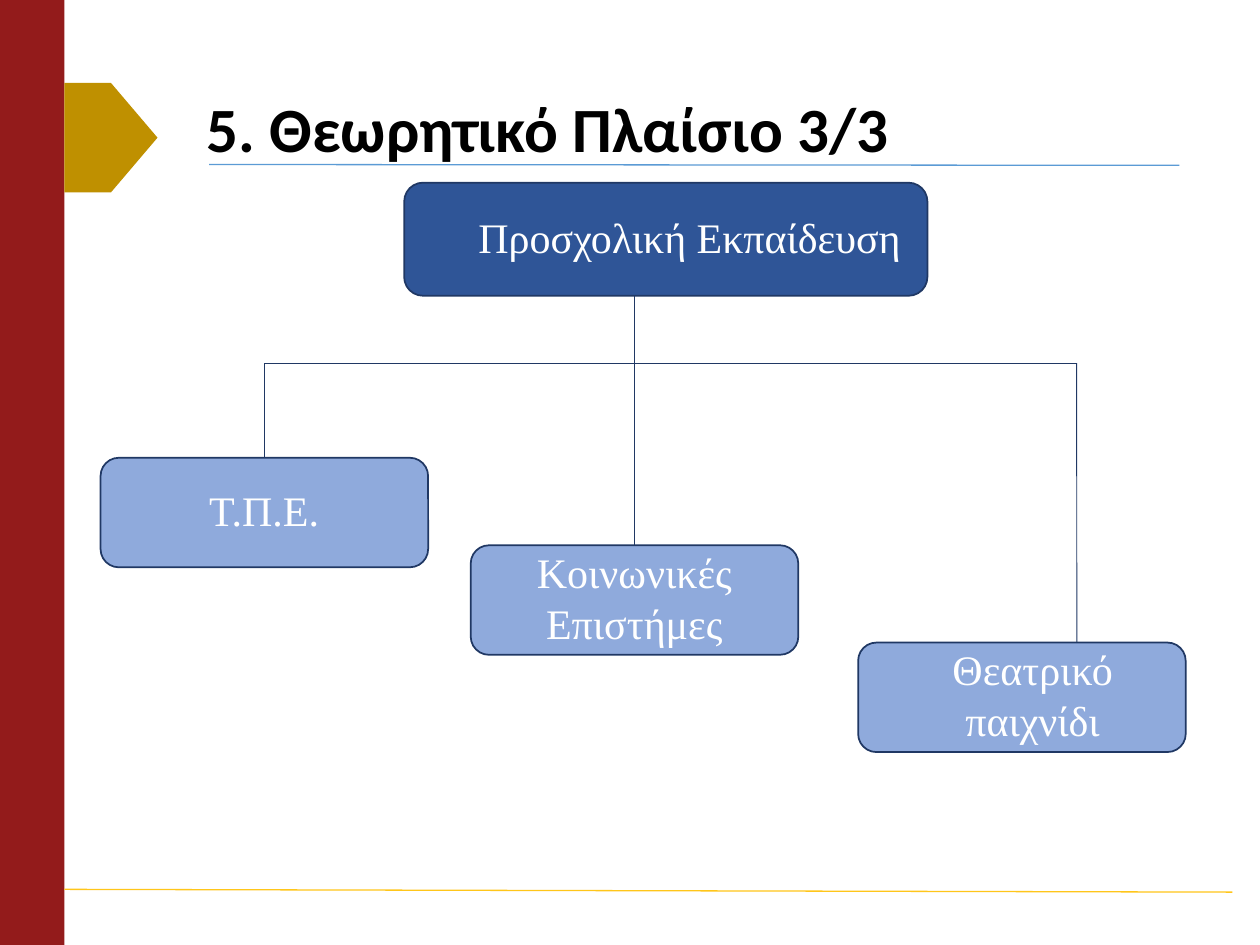
import pptx
import pptx.dml.color
import pptx.enum.shapes
import pptx.enum.text
import pptx.oxml.ns
import pptx.util
import lxml.etree

Pt = pptx.util.Pt
SHAPES = pptx.enum.shapes.MSO_SHAPE
STRAIGHT = pptx.enum.shapes.MSO_CONNECTOR.STRAIGHT
ALIGN = pptx.enum.text.PP_ALIGN
ANCHOR = pptx.enum.text.MSO_ANCHOR
NAVY, PALE_BLUE = "203864", "8FAADC"


def color(hex_string):
    return pptx.dml.color.RGBColor.from_string(hex_string)


def add_text(text, left, top, width, height, size=24, font="Times New Roman",
             fill="FFFFFF", bold=False, align=ALIGN.CENTER,
             anchor=ANCHOR.TOP, spacing=1.0):
    box = page.shapes.add_textbox(Pt(left), Pt(top), Pt(width), Pt(height))
    frame = box.text_frame
    frame.word_wrap = True
    frame.vertical_anchor = anchor
    para = frame.paragraphs[0]
    para.alignment = align
    para.line_spacing = spacing
    span = para.add_run()
    span.text = text
    span.font.size = Pt(size)
    span.font.name = font
    span.font.bold = bold
    span.font.color.rgb = color(fill)


deck = pptx.Presentation()
deck.slide_width, deck.slide_height = Pt(720), Pt(540)
page = deck.slides.add_slide(deck.slide_layouts[6])

# Side band, arrow tab and the four diagram boxes
shape_rows = [
    (SHAPES.RECTANGLE, 0, 0, 36.8, 540, "931B1B", None),
    (SHAPES.PENTAGON, 36.8, 47.4, 53.2, 62.6, "BF9000", None),
    (SHAPES.ROUNDED_RECTANGLE, 231, 104.4, 299, 64.6, "2F5597", NAVY),
    (SHAPES.ROUNDED_RECTANGLE, 57.5, 261.6, 187.2, 62.6, PALE_BLUE, NAVY),
    (SHAPES.ROUNDED_RECTANGLE, 269, 311.6, 187.2, 62.6, PALE_BLUE, NAVY),
    (SHAPES.ROUNDED_RECTANGLE, 490.4, 367.2, 187.2, 62.6, PALE_BLUE, NAVY),
]
shapes = []
for kind, left, top, width, height, fill, outline in shape_rows:
    shape = page.shapes.add_shape(kind, Pt(left), Pt(top), Pt(width), Pt(height))
    shape.shadow.inherit = False
    shape.fill.solid()
    shape.fill.fore_color.rgb = color(fill)
    if outline:
        shape.line.color.rgb = color(outline)
        shape.line.width = Pt(1)
    else:
        shape.line.fill.background()
    shapes.append(shape)
ict_box, social_box = shapes[3:5]

# Title and box labels
add_text("5. Θεωρητικό Πλαίσιο 3/3", 111, 45.4, 566.6, 60.5, size=36,
         font="Calibri", fill="000000", bold=True, align=ALIGN.LEFT,
         anchor=ANCHOR.MIDDLE, spacing=0.9)
add_text("Προσχολική Εκπαίδευση", 231, 117.4, 326.2, 36)
for text, left, top, height in [
    ("Τ.Π.Ε.", 70.6, 273.6, 36),
    ("Κοινωνικές Επιστήμες", 282.2, 308.9, 65.5),
    ("Θεατρικό παιχνίδι", 509.8, 364.3, 65.5),
]:
    add_text(text, left, top, 160.6, height)

# Title rule, footer rule and the tree's branches
branch_y = 207.5
for x1, y1, x2, y2, stroke, weight, target in [
    (119.5, 94, 673.9, 94.5, "5B9BD5", 0.75, None),
    (36.8, 508.2, 704.2, 509.8, "FFC61A", 0.75, None),
    (151.1, branch_y, 615.2, branch_y, NAVY, 0.5, None),
    (151.1, branch_y, 151.1, 261.6, NAVY, 0.5, ict_box),
    (362.6, 169, 362.6, 311.6, NAVY, 0.5, social_box),
    (615.2, branch_y, 615.4, 367.2, NAVY, 0.5, None),
]:
    line = page.shapes.add_connector(STRAIGHT, Pt(x1), Pt(y1), Pt(x2), Pt(y2))
    line.line.color.rgb = color(stroke)
    line.line.width = Pt(weight)
    lxml.etree.SubElement(line.element.spPr, pptx.oxml.ns.qn("a:effectLst"))
    if target is not None:
        line.end_connect(target, 0)

deck.save("out.pptx")
